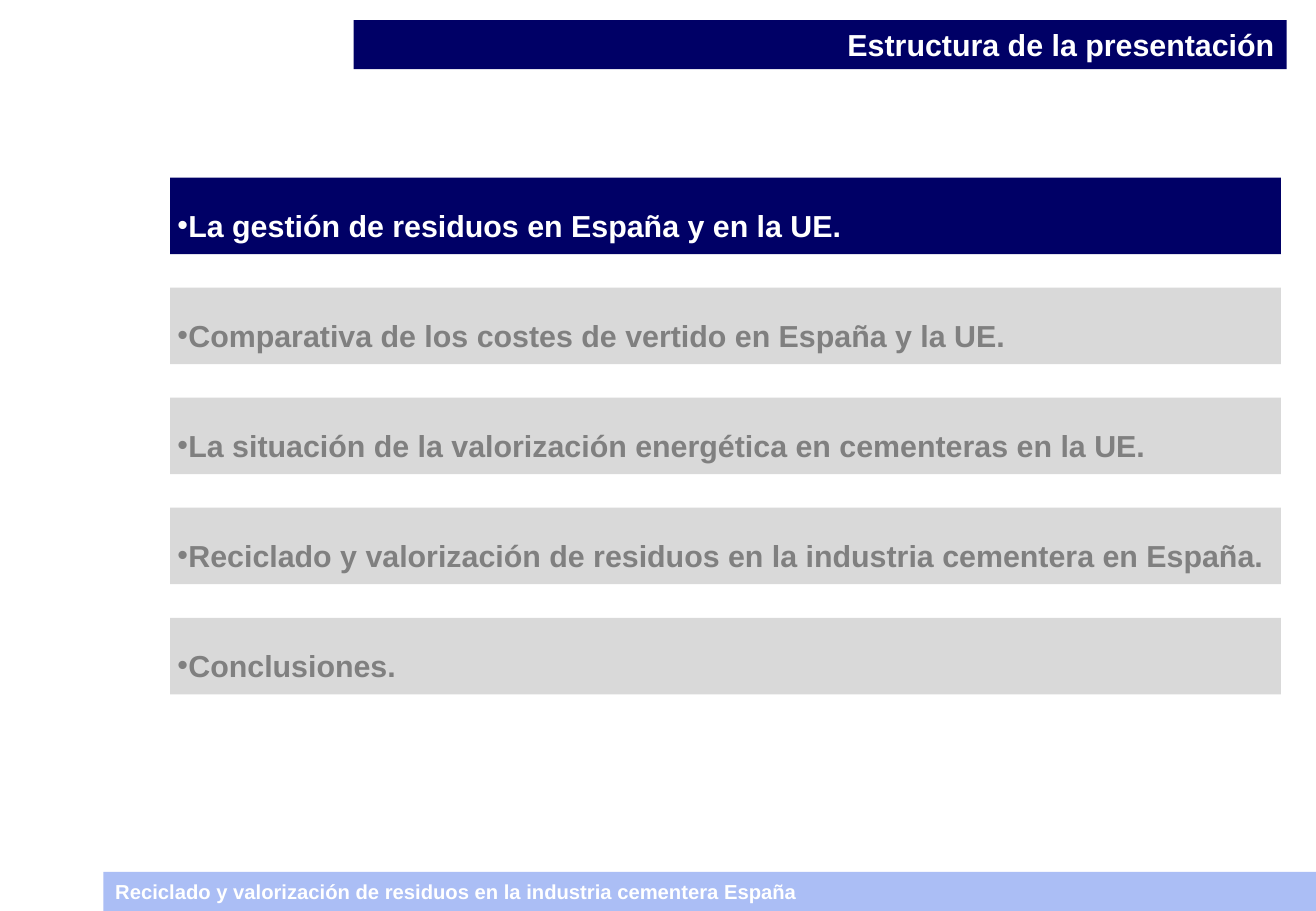
from dataclasses import dataclass

from lxml import etree
from pptx import Presentation, util as u
from pptx.dml.color import RGBColor
from pptx.enum import shapes, text
from pptx.oxml.ns import qn


@dataclass(frozen=True)
class Theme:
    font: str = "Arial"
    navy: str = "000066"
    sky: str = "ABBEF5"
    silver: str = "D9D9D9"
    gray: str = "808080"
    white: str = "FFFFFF"
    heading_size: int = 18
    footer_size: int = 12


TOPICS = [
    "La gestión de residuos en España y en la UE.",
    "Comparativa de los costes de vertido en España y la UE.",
    "La situación de la valorización energética en cementeras en la UE.",
    "Reciclado y valorización de residuos en la industria cementera en España.",
    "Conclusiones.",
]
CURRENT_TOPIC = 0
# Percentages of the slide's width and height
TOPIC_LEFT, TOPIC_WIDTH = 12.93, 84.4
TOPIC_TOP, TOPIC_HEIGHT, TOPIC_PITCH = 19.5, 8.4, 12.08


def add_bullet(paragraph, hanging):
    properties = paragraph._p.get_or_add_pPr()
    properties.set("marL", str(hanging))
    properties.set("indent", str(-hanging))
    etree.SubElement(properties, qn("a:buFont")).set("typeface", "Arial")
    etree.SubElement(properties, qn("a:buChar")).set("char", "•")


def write(frame, words, *, font, size, color, align, margin=0.1,
          line_spacing=1.0, hanging=None):
    frame.word_wrap = True
    frame.auto_size = text.MSO_AUTO_SIZE.NONE
    frame.vertical_anchor = text.MSO_ANCHOR.MIDDLE
    frame.margin_left = frame.margin_right = u.Inches(margin)
    frame.margin_top = frame.margin_bottom = u.Inches(0.05)
    paragraph = frame.paragraphs[0]
    paragraph.alignment = align
    paragraph.line_spacing = line_spacing
    if hanging:
        add_bullet(paragraph, u.Inches(hanging))
    run = paragraph.add_run()
    run.text = words
    run.font.name = font
    run.font.size = u.Pt(size)
    run.font.bold = True
    run.font.color.rgb = RGBColor.from_string(color)


class AgendaSlide:
    def __init__(self, deck, theme):
        self.theme = theme
        self.width, self.height = deck.slide_width, deck.slide_height
        self.slide = deck.slides.add_slide(deck.slide_layouts[5])

    def box(self, left, top, width, height):
        """Turn percentages of the slide into lengths."""
        return (round(self.width * left / 100), round(self.height * top / 100),
                round(self.width * width / 100), round(self.height * height / 100))

    def bar(self, area, fill):
        bar = self.slide.shapes.add_shape(shapes.MSO_SHAPE.RECTANGLE, *self.box(*area))
        bar.shadow.inherit = False
        bar.fill.solid()
        bar.fill.fore_color.rgb = RGBColor.from_string(fill)
        bar.line.fill.background()
        return bar

    def title(self, words, area):
        heading = self.slide.shapes.title
        heading.left, heading.top, heading.width, heading.height = self.box(*area)
        heading.fill.solid()
        heading.fill.fore_color.rgb = RGBColor.from_string(self.theme.navy)
        write(heading.text_frame, words, font=self.theme.font,
              size=self.theme.heading_size, color=self.theme.white,
              align=text.PP_ALIGN.RIGHT)

    def topic(self, words, row, current):
        theme = self.theme
        fill, color = (theme.navy, theme.white) if current else (theme.silver, theme.gray)
        area = (TOPIC_LEFT, TOPIC_TOP + row * TOPIC_PITCH, TOPIC_WIDTH, TOPIC_HEIGHT)
        write(self.bar(area, fill).text_frame, words, font=theme.font,
              size=theme.heading_size, color=color, align=text.PP_ALIGN.JUSTIFY,
              margin=0.06, line_spacing=1.5, hanging=0.09)

    def footer(self, words, area):
        write(self.bar(area, self.theme.sky).text_frame, words, font=self.theme.font,
              size=self.theme.footer_size, color=self.theme.white,
              align=text.PP_ALIGN.LEFT)


def main():
    deck = Presentation()
    deck.slide_width, deck.slide_height = u.Inches(10.83), u.Inches(7.5)
    agenda = AgendaSlide(deck, Theme())
    agenda.footer("Reciclado y valorización de residuos en la industria cementera España",
                  (7.85, 95.7, 92.15, 4.3))
    agenda.title("Estructura de la presentación", (26.87, 2.2, 70.91, 5.4))
    for row, words in enumerate(TOPICS):
        agenda.topic(words, row, current=row == CURRENT_TOPIC)
    deck.save("out.pptx")


if __name__ == "__main__":
    main()
